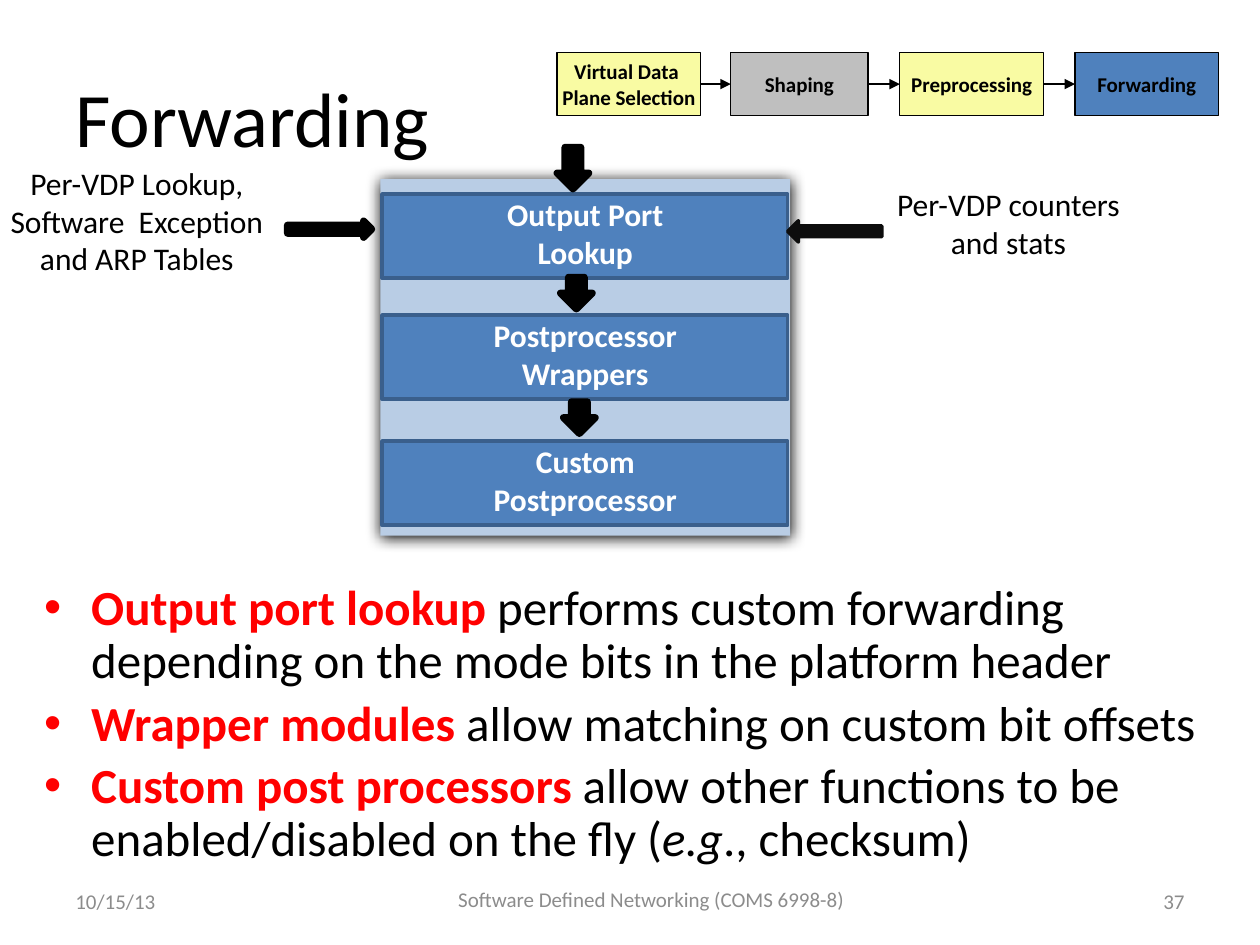
from lxml import etree
from pptx import Presentation
from pptx.dml.color import RGBColor
from pptx.enum.shapes import MSO_CONNECTOR, MSO_SHAPE as Preset
from pptx.enum.text import MSO_ANCHOR as Anchor, PP_ALIGN as Align
from pptx.oxml.ns import qn
from pptx.util import Cm, Pt

BLACK = RGBColor(0x00, 0x00, 0x00)
NEAR_BLACK = RGBColor(0x0D, 0x0D, 0x0D)
WHITE = RGBColor(0xFF, 0xFF, 0xFF)
RED = RGBColor(0xFF, 0x00, 0x00)
YELLOW = RGBColor(0xF9, 0xFB, 0xA3)
GRAY = RGBColor(0xBF, 0xBF, 0xBF)
FOOTER_GRAY = RGBColor(0x8C, 0x8C, 0x8C)
BLUE = RGBColor(0x4F, 0x81, 0xBD)
DARK_BLUE = RGBColor(0x3A, 0x5F, 0x8C)
PALE_BLUE = RGBColor(0xB9, 0xCD, 0xE5)

CHAIN = [  # label, left, width, fill
    ("Virtual Data \vPlane Selection", 11.23, 2.9, YELLOW),
    ("Shaping", 14.73, 2.77, GRAY),
    ("Preprocessing", 18.14, 2.9, YELLOW),
    ("Forwarding", 21.67, 2.9, BLUE),
]
STAGES = [  # label, top
    ("Output Port Lookup", 3.91),
    ("Postprocessor\nWrappers", 6.35),
    ("Custom Postprocessor", 8.89),
]
FLOW_ARROWS = [(11.23, 2.97, 0.84), (11.3, 5.59, 0.64), (11.36, 8.1, 0.64)]
BULLETS = [  # each a list of (text, style)
    [("Output port lookup ", "key"),
     ("performs custom forwarding depending on the mode bits in the platform header", "")],
    [("Wrapper modules", "key"), (" allow matching on custom bit offsets", "")],
    [("Custom post processors", "key"),
     (" allow other functions to be enabled/disabled on the fly (", ""),
     ("e.g", "italic"), ("., checksum)", "")],
]


def style_run(run, size, color, bold=False, italic=False):
    font = run.font
    font.name, font.size, font.bold, font.italic = "Calibri", Pt(size), bold, italic
    font.color.rgb = color


def write(shape, text, size, color=BLACK, bold=False, align=Align.CENTER,
          anchor=Anchor.TOP, wrap=True):
    frame = shape.text_frame
    frame.text = text
    frame.word_wrap = wrap
    frame.vertical_anchor = anchor
    for paragraph in frame.paragraphs:
        paragraph.alignment = align
        for run in paragraph.runs:
            style_run(run, size, color, bold)


def add_label(slide, box, text, size, **style):
    label = slide.shapes.add_textbox(*map(Cm, box))
    write(label, text, size, **style)


def add_block(slide, preset, box, fill, line=None, line_width=0.75):
    block = slide.shapes.add_shape(preset, *map(Cm, box))
    block.shadow.inherit = False
    block.fill.solid()
    block.fill.fore_color.rgb = fill
    if line is None:
        block.line.fill.background()
    else:
        block.line.color.rgb = line
        block.line.width = Pt(line_width)
    return block


def add_panel(slide):
    """Pale panel behind the stages, with a soft dark shadow."""
    panel = add_block(slide, Preset.RECTANGLE, (7.67, 3.61, 8.26, 7.19), PALE_BLUE)
    effects = panel._element.spPr.find(qn("a:effectLst"))
    shadow = etree.SubElement(effects, qn("a:outerShdw"), blurRad=str(Pt(8.5)),
                              dist=str(Pt(1)), dir="5400000", algn="ctr",
                              rotWithShape="0")
    etree.SubElement(shadow, qn("a:srgbClr"), val=str(BLACK))


def link(slide, source, target):
    """Arrow from the right side of source to the left side of target."""
    arrow = slide.shapes.add_connector(MSO_CONNECTOR.STRAIGHT, 0, 0, 0, 0)
    arrow.begin_connect(source, 3)
    arrow.end_connect(target, 1)
    arrow.line.color.rgb = BLACK
    arrow.line.width = Pt(0.75)
    etree.SubElement(arrow.line._get_or_add_ln(), qn("a:tailEnd"), type="triangle")
    etree.SubElement(arrow._element.spPr, qn("a:effectLst"))


def add_chain(slide):
    steps = []
    for text, left, width, fill in CHAIN:
        step = add_block(slide, Preset.RECTANGLE, (left, 1.06, width, 1.27), fill, BLACK)
        write(step, text, 12, bold=True, anchor=Anchor.MIDDLE, wrap=False)
        steps.append(step)
    for source, target in zip(steps, steps[1:]):
        link(slide, source, target)


def add_stages(slide):
    for text, top in STAGES:
        add_block(slide, Preset.RECTANGLE, (7.7, top, 8.18, 1.7), BLUE, DARK_BLUE, 2)
        add_label(slide, (8.97, top - 0.1, 5.66, 1.8), text, 18, color=WHITE, bold=True)


def add_block_arrows(slide):
    for left, top, height in FLOW_ARROWS:
        add_block(slide, Preset.DOWN_ARROW, (left, top, 0.64, height), BLACK, BLACK, 4)
    tables_arrow = add_block(slide, Preset.DOWN_ARROW, (6.48, 3.77, 0.33, 1.7),
                             BLACK, BLACK, 4)
    tables_arrow.rotation = 270
    add_block(slide, Preset.LEFT_ARROW, (15.88, 4.45, 1.9, 0.43),
              NEAR_BLACK, NEAR_BLACK, 2)


def add_bullets(slide):
    frame = slide.shapes.add_textbox(Cm(0.64), Cm(11.63), Cm(24.13), Cm(5.92)).text_frame
    frame.word_wrap = True
    for index, parts in enumerate(BULLETS):
        paragraph = frame.add_paragraph() if index else frame.paragraphs[0]
        paragraph.line_spacing = 0.9
        paragraph.space_before = Pt(5.6)
        properties = paragraph._p.get_or_add_pPr()
        properties.set("marL", str(Cm(0.95)))
        properties.set("indent", str(Cm(-0.95)))
        etree.SubElement(properties, qn("a:buFont"), typeface="Arial")
        etree.SubElement(properties, qn("a:buChar"), char="•")
        for text, style in parts:
            run = paragraph.add_run()
            run.text = text
            is_key = style == "key"
            style_run(run, 28, RED if is_key else BLACK, is_key, style == "italic")


def add_footer(slide):
    for text, box, align in [
        ("37", (18.2, 17.65, 5.93, 1.02), Align.RIGHT),
        ("10/15/13", (1.27, 17.65, 5.93, 1.02), Align.LEFT),
        ("Software Defined Networking (COMS 6998-8)", (8.68, 17.58, 8.9, 1.09), Align.CENTER),
    ]:
        add_label(slide, box, text, 12, color=FOOTER_GRAY, align=align,
                  anchor=Anchor.MIDDLE)


def main():
    deck = Presentation()
    deck.slide_width, deck.slide_height = Cm(25.4), Cm(19.05)
    slide = deck.slides.add_slide(deck.slide_layouts[6])
    add_panel(slide)
    add_label(slide, (1.27, 0.76, 22.86, 3.18), "Forwarding", 44,
              align=Align.LEFT, anchor=Anchor.MIDDLE)
    add_bullets(slide)
    add_chain(slide)
    add_stages(slide)
    add_block_arrows(slide)
    add_label(slide, (-0.2, 3.18, 5.92, 2.57),
              "Per-VDP Lookup, Software  Exception and ARP Tables", 18)
    add_label(slide, (17.58, 3.61, 5.5, 1.8), "Per-VDP counters and stats", 18)
    add_footer(slide)
    deck.save("out.pptx")


if __name__ == "__main__":
    main()
